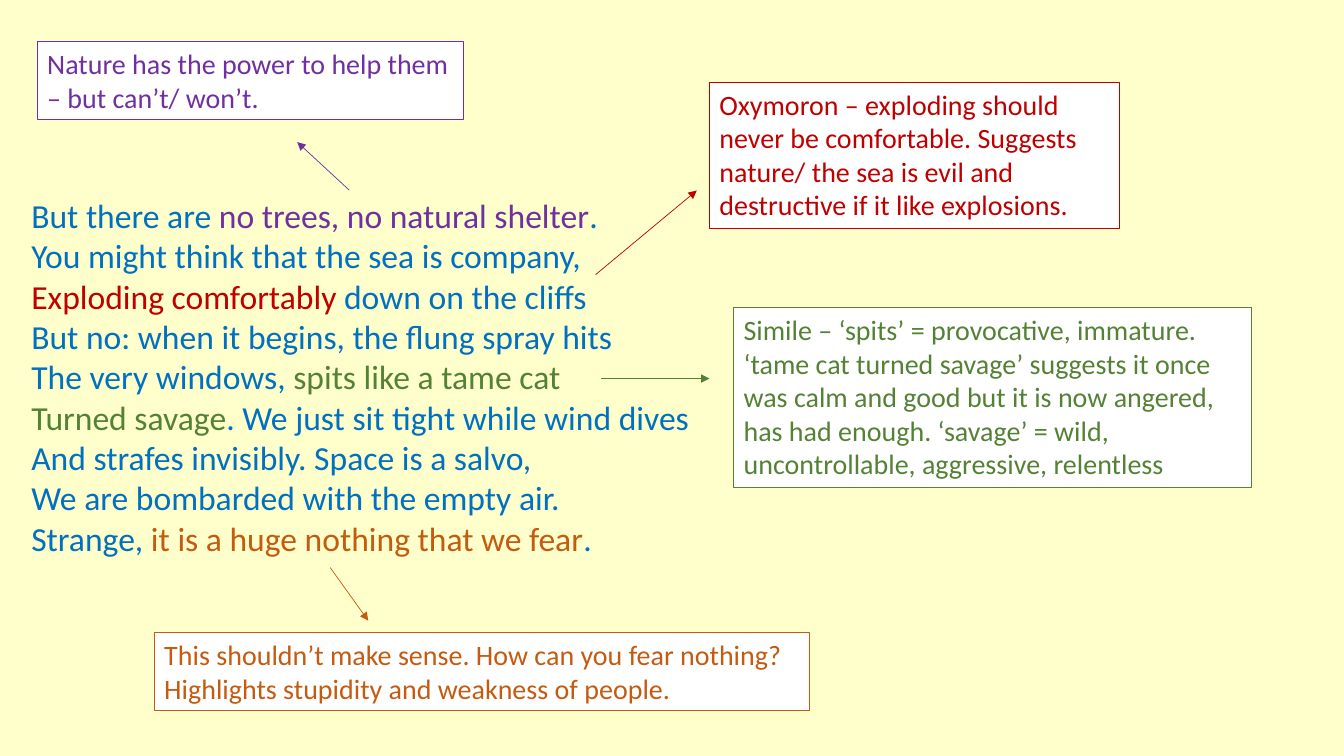
from lxml.etree import SubElement
from pptx import Presentation
from pptx.dml.color import RGBColor
from pptx.enum.shapes import MSO_CONNECTOR
from pptx.enum.text import MSO_AUTO_SIZE
from pptx.oxml.ns import qn
from pptx.util import Cm, Pt

CREAM = RGBColor(0xFF, 0xFF, 0xCC)
WHITE = RGBColor(0xFF, 0xFF, 0xFF)
BLUE = RGBColor(0x00, 0x70, 0xC0)
PURPLE = RGBColor(0x70, 0x30, 0xA0)
RED = RGBColor(0xC0, 0x00, 0x00)
GREEN = RGBColor(0x54, 0x82, 0x35)
ORANGE = RGBColor(0xC5, 0x5A, 0x11)

POEM = [
    [("But there are ", BLUE), ("no trees, no natural shelter", PURPLE), (".", BLUE)],
    [("You might think that the sea is company,", BLUE)],
    [("Exploding comfortably ", RED), ("down on the cliffs", BLUE)],
    [("But no: when it begins, the flung spray hits", BLUE)],
    [("The very windows, ", BLUE), ("spits like a tame cat", GREEN)],
    [("Turned savage", GREEN), (". We just sit tight while wind dives", BLUE)],
    [("And strafes invisibly. Space is a salvo,", BLUE)],
    [("We are bombarded with the empty air.", BLUE)],
    [("Strange, ", BLUE), ("it is a huge nothing that we fear", ORANGE), (".", BLUE)],
]

REMARKS = [
    (PURPLE, (0.94, 1.05, 10.74, 1.96), (8.8, 4.79, 7.49, 3.58),
     "Nature has the power to help them – but can’t/ won’t."),
    (RED, (17.88, 2.07, 10.33, 3.68), (15.01, 6.92, 17.56, 4.8),
     "Oxymoron – exploding should never be comfortable. Suggests nature/ the sea "
     "is evil and destructive if it like explosions."),
    (GREEN, (18.49, 7.75, 13.04, 4.53), (15.15, 9.54, 17.88, 9.54),
     "Simile – ‘spits’ = provocative, immature. ‘tame cat turned savage’ suggests "
     "it once was calm and good but it is now angered, has had enough. "
     "‘savage’ = wild, uncontrollable, aggressive, relentless"),
    (ORANGE, (3.89, 15.94, 16.52, 1.96), (8.32, 14.3, 9.28, 15.64),
     "This shouldn’t make sense. How can you fear nothing? Highlights stupidity "
     "and weakness of people."),
]

deck = Presentation()
deck.slide_width, deck.slide_height = Cm(33.87), Cm(19.05)
slide = deck.slides.add_slide(deck.slide_layouts[6])
slide.background.fill.solid()
slide.background.fill.fore_color.rgb = CREAM


def add_box(area):
    box = slide.shapes.add_textbox(*map(Cm, area))
    box.text_frame.word_wrap = True
    box.text_frame.auto_size = MSO_AUTO_SIZE.SHAPE_TO_FIT_TEXT
    return box


def style(run, size, color):
    run.font.name = "Calibri"
    run.font.size = Pt(size)
    run.font.color.rgb = color


frame = add_box((0.54, 4.79, 18.72, 9.5)).text_frame
for row, verse in enumerate(POEM):
    para = frame.add_paragraph() if row else frame.paragraphs[0]
    for words, color in verse:
        run = para.add_run()
        run.text = words
        style(run, 24, color)

for color, area, ends, words in REMARKS:
    box = add_box(area)
    box.fill.solid()
    box.fill.fore_color.rgb = WHITE
    box.line.color.rgb = color
    box.line.width = Pt(0.75)
    box.text_frame.text = words
    style(box.text_frame.paragraphs[0].runs[0], 20, color)

    arrow = slide.shapes.add_connector(MSO_CONNECTOR.STRAIGHT, *map(Cm, ends))
    arrow.line.color.rgb = color
    arrow.line.width = Pt(0.5)
    SubElement(arrow.line._get_or_add_ln(), qn("a:tailEnd"), type="triangle")
    SubElement(arrow._element.spPr, qn("a:effectLst"))

deck.save("out.pptx")
